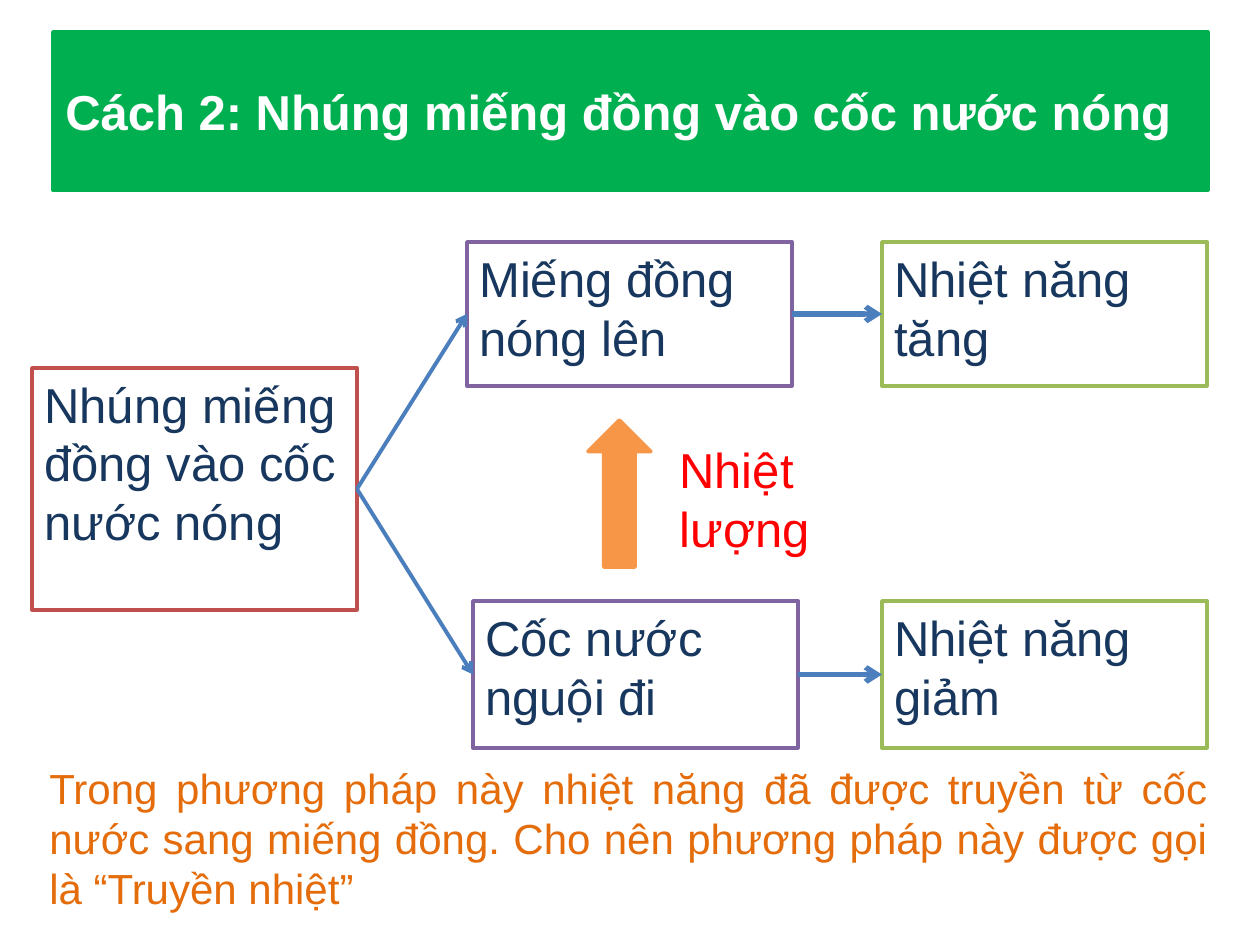
import pptx
import pptx.util
import pptx.dml.color
import pptx.enum.shapes
import pptx.enum.text
import pptx.oxml
import pptx.oxml.ns

SHAPE = pptx.enum.shapes.MSO_SHAPE
ANCHOR = pptx.enum.text.MSO_ANCHOR
ALIGN = pptx.enum.text.PP_ALIGN
TOP, LEFT, BOTTOM, RIGHT = range(4)
NAVY = "17375E"
PURPLE = "8064A2"
GREEN = "9BBB59"


def px(n):
    return pptx.util.Emu(round(n * 914400 / 126))


def rgb(color):
    return pptx.dml.color.RGBColor.from_string(color)


def write(sp, text, color, size=28, bold=False, align=ALIGN.LEFT, anchor=ANCHOR.TOP):
    tf = sp.text_frame
    tf.word_wrap = True
    tf.vertical_anchor = anchor
    tf.text = text
    p = tf.paragraphs[0]
    p.alignment = align
    font = p.runs[0].font
    font.name = "Arial"
    font.size = pptx.util.Pt(size)
    font.bold = bold
    font.color.rgb = rgb(color)


def add_shape(s, kind, box, line, fill=None):
    sp = s.shapes.add_shape(kind, *map(px, box))
    sp.shadow.inherit = False
    if fill:
        sp.fill.solid()
        sp.fill.fore_color.rgb = rgb(fill)
    else:
        sp.fill.background()
    sp.line.color.rgb = rgb(line)
    sp.line.width = pptx.util.Pt(2)
    return sp


def add_step(s, box, text, line):
    """Add an outlined box holding one step of the process."""
    sp = add_shape(s, SHAPE.RECTANGLE, box, line)
    write(sp, text, NAVY)
    return sp


def add_text(s, box, text, color, **style):
    write(s.shapes.add_textbox(*map(px, box)), text, color, **style)


def link(s, start, end, width):
    """Draw an arrow from the right side of start to the left side of end."""
    c = s.shapes.add_connector(pptx.enum.shapes.MSO_CONNECTOR.STRAIGHT, 0, 0, 0, 0)
    c.begin_connect(start, RIGHT)
    c.end_connect(end, LEFT)
    c.line.color.rgb = rgb("4B7EBC")
    c.line.width = pptx.util.Pt(width)
    tail = pptx.oxml.parse_xml(
        '<a:tailEnd %s type="arrow"/>' % pptx.oxml.ns.nsdecls("a"))
    c.line._get_or_add_ln().append(tail)
    effects = pptx.oxml.parse_xml("<a:effectLst %s/>" % pptx.oxml.ns.nsdecls("a"))
    c._element.spPr.append(effects)


def title_bar(s, box):
    sp = add_shape(s, SHAPE.RECTANGLE, box, "00B050", "00B050")
    write(sp, "Cách 2: Nhúng miếng đồng vào cốc nước nóng", "FFFFFF",
          bold=True, anchor=ANCHOR.MIDDLE)


def heat_flow(s, box):
    """Place the action, its two effects with results, and the heat arrow."""
    x, y, w, h = box
    step_w = 325
    result_x = x + w - step_w
    action = add_step(s, (x, y + 126, step_w, 242),
                      "Nhúng miếng đồng vào cốc nước nóng", "C0504D")
    rows = [
        (435, 0, 144, "Miếng đồng nóng lên", "Nhiệt năng tăng"),
        (441, h - 147, 147, "Cốc nước nguội đi", "Nhiệt năng giảm"),
    ]
    for dx, dy, row_h, effect_text, result_text in rows:
        effect = add_step(s, (x + dx, y + dy, step_w, row_h), effect_text, PURPLE)
        result = add_step(s, (result_x, y + dy, step_w, row_h), result_text, GREEN)
        link(s, action, effect, 2.25)
        link(s, effect, result, 3)
    add_shape(s, SHAPE.UP_ARROW, (x + 556, y + 178, 63, 147), "F79646", "F79646")
    add_text(s, (x + 635, y + 191, 210, 129), "Nhiệt lượng", "FF0000")


def conclusion(s, box):
    add_text(s, box,
             "Trong phương pháp này nhiệt năng đã được truyền từ cốc nước sang "
             "miếng đồng. Cho nên phương pháp này được gọi là “Truyền nhiệt”",
             "E46C0A", size=24, align=ALIGN.JUSTIFY)


def main():
    prs = pptx.Presentation()
    prs.slide_width, prs.slide_height = px(1260), px(945)
    s = prs.slides.add_slide(prs.slide_layouts[6])
    title_bar(s, (53, 32, 1155, 158))
    heat_flow(s, (32, 242, 1175, 506))
    conclusion(s, (37, 756, 1183, 189))
    prs.save("out.pptx")


if __name__ == "__main__":
    main()
